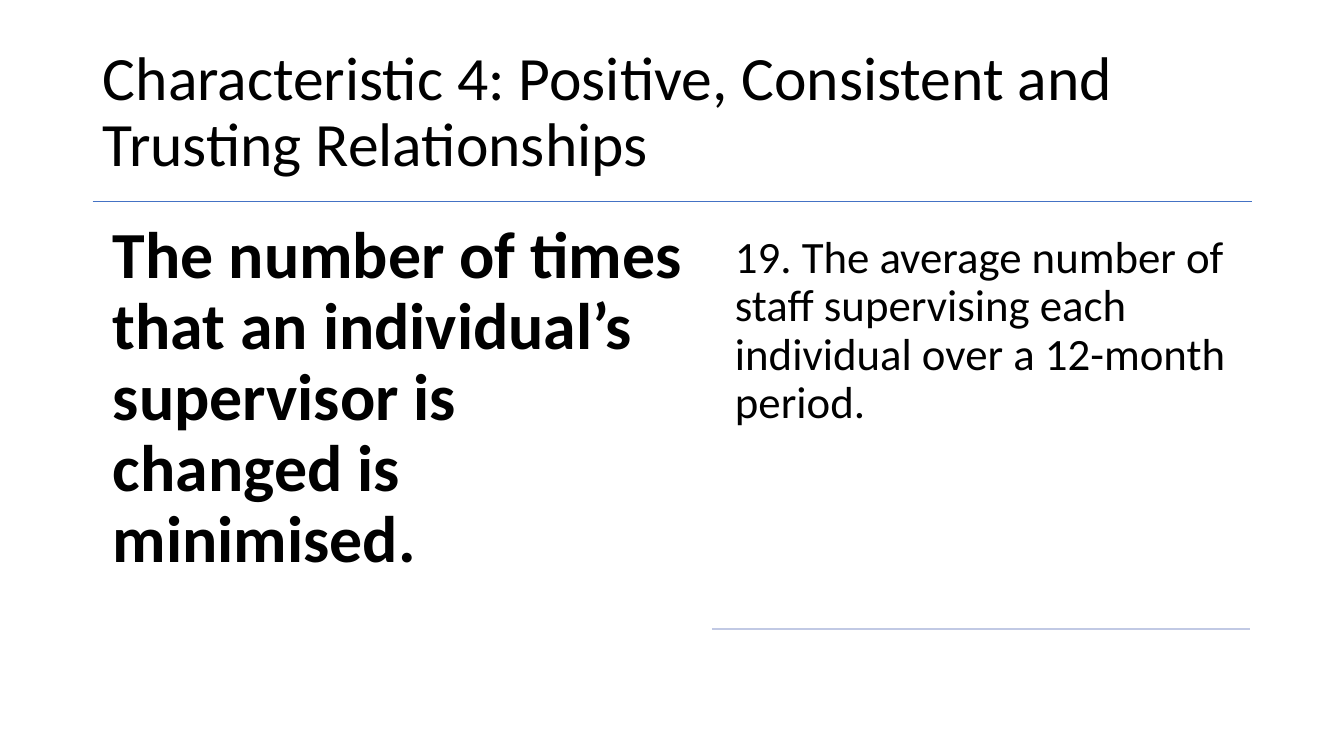
from pptx import Presentation
from pptx.dml.color import RGBColor
from pptx.enum import text
from pptx.oxml import ns
from pptx.util import Inches, Pt
from lxml import etree

BLACK = RGBColor(0, 0, 0)
BLUE = RGBColor(0x44, 0x72, 0xC4)
PALE = RGBColor(0xC1, 0xC9, 0xE4)
FONT = "Calibri"

TITLE = "Characteristic 4: Positive, Consistent and Trusting Relationships"
TITLE_BOX = (0.92, 0.4, 11.5, 1.45)
BLOCKS = [
    ("The number of times that an individual’s supervisor is changed is minimised.",
     (0.92, 2, 6.15, 4.45), 0.2, 47, True),
    ("19. The average number of staff supervising each individual over a 12-month period.",
     (7.16, 2.2, 5.24, 4.04), 0.13, 32, False),
]
RULES = [(0.92, 12.42, 2, BLUE), (7.06, 12.4, 6.24, PALE)]


def write(shape, words, size, bold, anchor):
    frame = shape.text_frame
    frame.text = words
    frame.word_wrap = True
    frame.auto_size = text.MSO_AUTO_SIZE.NONE
    frame.vertical_anchor = anchor
    para = frame.paragraphs[0]
    para.alignment = text.PP_ALIGN.LEFT
    para.line_spacing = 0.9
    font = para.runs[0].font
    font.name, font.size, font.bold = FONT, Pt(size), bold
    font.color.rgb = BLACK
    return frame


def rule(slide, left, right, top, color):
    line = slide.shapes.add_connector(
        1, Inches(left), Inches(top), Inches(right), Inches(top))
    line.line.color.rgb = color
    line.line.width = Pt(1)
    etree.SubElement(line._element.spPr, ns.qn("a:effectLst"))


def main():
    deck = Presentation()
    deck.slide_width, deck.slide_height = Inches(13.33), Inches(7.5)
    slide = deck.slides.add_slide(deck.slide_layouts[5])

    title = slide.shapes.title
    title.left, title.top, title.width, title.height = map(Inches, TITLE_BOX)
    write(title, TITLE, 44, False, text.MSO_ANCHOR.MIDDLE)

    for words, box, inset, size, bold in BLOCKS:
        shape = slide.shapes.add_textbox(*map(Inches, box))
        frame = write(shape, words, size, bold, text.MSO_ANCHOR.TOP)
        frame.margin_left = frame.margin_right = Inches(inset)
        frame.margin_top = frame.margin_bottom = Inches(inset)

    for item in RULES:
        rule(slide, *item)

    deck.save("out.pptx")


if __name__ == "__main__":
    main()
